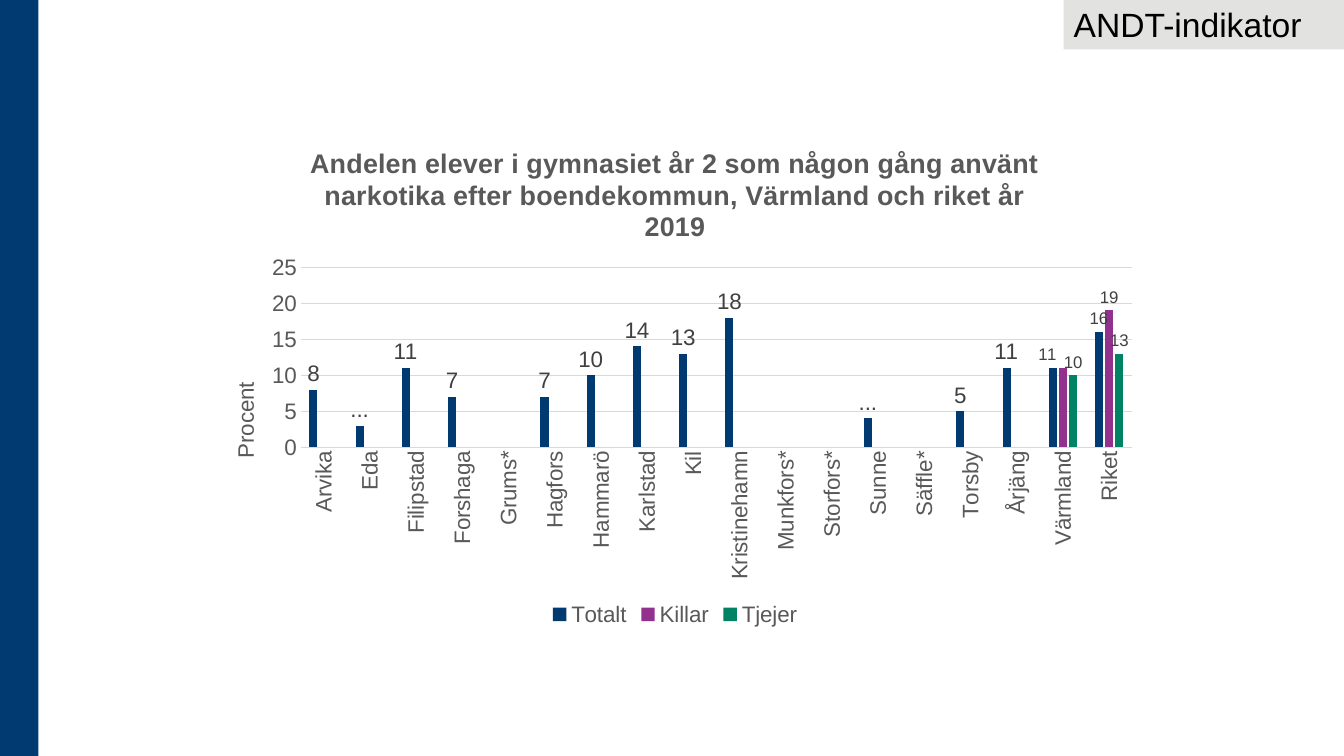
from lxml import etree
from pptx import Presentation
from pptx.chart.data import CategoryChartData
from pptx.dml.color import RGBColor
from pptx.enum.chart import XL_CHART_TYPE, XL_LABEL_POSITION, XL_LEGEND_POSITION, XL_TICK_MARK
from pptx.enum.shapes import MSO_SHAPE
from pptx.enum.text import MSO_ANCHOR, PP_ALIGN
from pptx.oxml.ns import qn
from pptx.util import Inches, Pt

COLUMNS = XL_CHART_TYPE.COLUMN_CLUSTERED
OUTSIDE_END = XL_LABEL_POSITION.OUTSIDE_END
BOTTOM = XL_LEGEND_POSITION.BOTTOM
NO_TICK = XL_TICK_MARK.NONE
RECTANGLE = MSO_SHAPE.RECTANGLE
MIDDLE = MSO_ANCHOR.MIDDLE
LEFT = PP_ALIGN.LEFT

FONT = "Arial"
NAVY, PURPLE, GREEN = "003A70", "93328E", "008264"
AXIS_TEXT, LABEL_TEXT, GRID = "595959", "404040", "D9D9D9"

TITLE = ("Andelen elever i gymnasiet år 2 som någon gång använt narkotika "
         "efter boendekommun, Värmland och riket år 2019")
AREAS = ["Arvika", "Eda", "Filipstad", "Forshaga", "Grums*", "Hagfors",
         "Hammarö", "Karlstad", "Kil", "Kristinehamn", "Munkfors*", "Storfors*",
         "Sunne", "Säffle*", "Torsby", "Årjäng", "Värmland", "Riket"]
TOTAL = [8, 3, 11, 7, None, 7, 10, 14, 13, 18, None, None,
         4, None, 5, 11, 11, 16]
NO_MUNICIPALITIES = [None] * (len(AREAS) - 2)
# name, values, colour, label size
SERIES = [
    ("Totalt", TOTAL, NAVY, 16),
    ("Killar", NO_MUNICIPALITIES + [11, 19], PURPLE, 12),
    ("Tjejer", NO_MUNICIPALITIES + [10, 13], GREEN, 12),
]


def rgb(color):
    return RGBColor.from_string(color)


def style_font(font, size, color, bold=False):
    font.name = FONT
    font.size = Pt(size)
    font.bold = bold
    font.color.rgb = rgb(color)


def add_panel(slide, left, top, width, height, color):
    panel = slide.shapes.add_shape(
        RECTANGLE, Inches(left), Inches(top), Inches(width), Inches(height))
    panel.shadow.inherit = False
    panel.fill.solid()
    panel.fill.fore_color.rgb = rgb(color)
    panel.line.fill.background()
    return panel


def add_tag(slide, text):
    tag = add_panel(slide, 10.55, -0.01, 2.78, 0.5, "E2E2E1")
    frame = tag.text_frame
    frame.vertical_anchor = MIDDLE
    paragraph = frame.paragraphs[0]
    paragraph.alignment = LEFT
    run = paragraph.add_run()
    run.text = text
    style_font(run.font, 24, "000000")


def add_title(owner, text, size, bold):
    """Give a chart or an axis its title."""
    frame = (owner.chart_title if hasattr(owner, "chart_title")
             else owner.axis_title).text_frame
    run = frame.paragraphs[0].add_run()
    run.text = text
    style_font(run.font, size, AXIS_TEXT, bold)


def set_layout(parent, after, target=None, edge_mode=True, **fractions):
    """Place a chart part by fractions of the chart size, behind the child `after`."""
    for old in parent.findall(qn("c:layout")):
        parent.remove(old)
    layout = etree.Element(qn("c:layout"))
    manual = etree.SubElement(layout, qn("c:manualLayout"))
    if target:
        etree.SubElement(manual, qn("c:layoutTarget")).set("val", target)
    if edge_mode:
        for mode in ("xMode", "yMode"):
            etree.SubElement(manual, qn(f"c:{mode}")).set("val", "edge")
    for key, value in fractions.items():
        etree.SubElement(manual, qn(f"c:{key}")).set("val", str(value))
    previous = parent.find(qn(after)) if after else None
    if previous is None:
        parent.insert(0, layout)
    else:
        previous.addnext(layout)


def point_label(series, area):
    return series.points[AREAS.index(area)].data_label


def label_xml(series, area):
    """Return the XML of one point's own label, made on first use."""
    point_label(series, area).position = OUTSIDE_END
    return series._element.xpath(
        f"c:dLbls/c:dLbl[c:idx/@val='{AREAS.index(area)}']")[0]


def style_series(series, color, label_size):
    series.format.fill.solid()
    series.format.fill.fore_color.rgb = rgb(color)
    series.invert_if_negative = False
    labels = series.data_labels
    labels.show_value = True
    labels.position = OUTSIDE_END
    labels.number_format = "0"
    labels.number_format_is_linked = False
    style_font(labels.font, label_size, LABEL_TEXT)


def adjust_labels(total, boys):
    for area in ("Eda", "Sunne"):
        label = point_label(total, area)
        run = label.text_frame.paragraphs[0].add_run()
        run.text = "..."
        style_font(run.font, 16, LABEL_TEXT)
        label.position = OUTSIDE_END
    style_font(point_label(total, "Riket").font, 12, LABEL_TEXT)
    point_label(total, "Riket").position = OUTSIDE_END

    hidden = label_xml(total, "Värmland")
    for child in list(hidden)[1:]:
        hidden.remove(child)
    etree.SubElement(hidden, qn("c:delete")).set("val", "1")

    style_font(point_label(boys, "Värmland").font, 12, LABEL_TEXT)
    set_layout(label_xml(boys, "Värmland"), "c:idx", edge_mode=False, x=-0.016, y=0)


def style_axes(chart):
    areas, percent = chart.category_axis, chart.value_axis
    for axis in (areas, percent):
        axis.major_tick_mark = axis.minor_tick_mark = NO_TICK
        style_font(axis.tick_labels.font, 16, AXIS_TEXT)
    areas.format.line.color.rgb = rgb(GRID)
    areas.format.line.width = Pt(0.75)
    areas._element.find(qn("c:txPr")).find(qn("a:bodyPr")).set("rot", "-5400000")

    percent.minimum_scale, percent.maximum_scale = 0, 25
    percent.major_unit = 5
    percent.tick_labels.number_format = "0"
    percent.tick_labels.number_format_is_linked = False
    percent.format.line.fill.background()
    percent.major_gridlines.format.line.color.rgb = rgb(GRID)
    percent.major_gridlines.format.line.width = Pt(0.75)
    add_title(percent, "Procent", 16, False)
    title = percent.axis_title._element
    title.find(".//" + qn("a:bodyPr")).set("rot", "-5400000")
    set_layout(title, "c:tx", x=0.03, y=0.5)


def add_drug_use_chart(slide):
    data = CategoryChartData(number_format="0")
    data.categories = AREAS
    for name, values, _, _ in SERIES:
        data.add_series(name, values)
    chart = slide.shapes.add_chart(
        COLUMNS, Inches(1.97), Inches(1.24), Inches(9.45), Inches(5.02), data).chart
    style_font(chart.font, 16, "000000")
    add_title(chart, TITLE, 19.2, True)
    chart.chart_title.include_in_layout = False
    chart.has_legend = True
    chart.legend.position = BOTTOM
    chart.legend.include_in_layout = False
    style_font(chart.legend.font, 16, AXIS_TEXT)

    plot = chart.plots[0]
    plot.vary_by_categories = False
    plot.gap_width = 219
    plot.overlap = -27
    for series, (_, _, color, label_size) in zip(plot.series, SERIES):
        style_series(series, color, label_size)
    adjust_labels(plot.series[0], plot.series[1])
    style_axes(chart)
    plot_area = chart._chartSpace.find(".//" + qn("c:plotArea"))
    set_layout(plot_area, None, "inner", x=0.107, y=0.281, w=0.873, h=0.356)


def main():
    deck = Presentation()
    deck.slide_width, deck.slide_height = Inches(13.33), Inches(7.5)
    slide = deck.slides.add_slide(deck.slide_layouts[6])
    add_panel(slide, 0, 0, 0.38, 7.5, NAVY)
    add_tag(slide, "ANDT-indikator")
    add_drug_use_chart(slide)
    deck.save("out.pptx")


if __name__ == "__main__":
    main()
